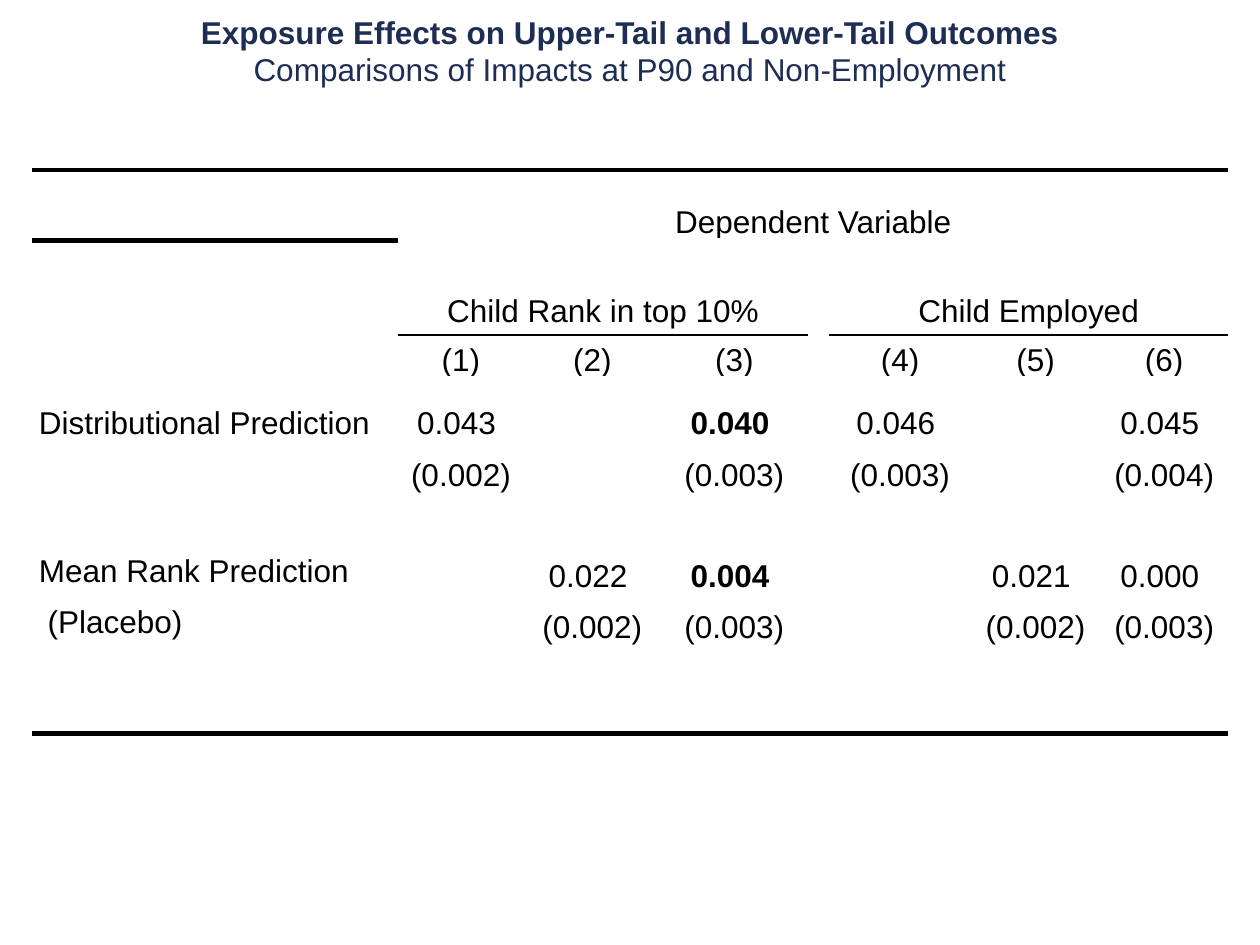
from dataclasses import dataclass

from lxml.etree import SubElement
from pptx import Presentation
from pptx.dml.color import RGBColor
from pptx.enum.text import MSO_ANCHOR as Anchor, PP_ALIGN as Align
from pptx.oxml.ns import qn
from pptx.util import Pt


@dataclass(frozen=True)
class Theme:
    font: str = "Arial"
    size: float = 18
    title: str = "1E2D53"
    ink: str = "000000"
    paper: str = "FFFFFF"
    thick: float = 3
    thin: float = 0.75
    leading: float = 1.15


THEME = Theme()
NO_GRID_STYLE = "{2D5ABB26-0587-4C30-8999-92F81FD0307C}"

COLUMN_WIDTHS = [209.4, 72, 21.3, 56.9, 16.4, 67.7, 12, 81.4, 73.5, 73.5]
ROW_HEIGHTS = [29.5, 40.3, 24.5, 29.5, 24.8, 36, 29.5, 29.5, 28.1, 29.5, 50.4, 28.8]
LAST = len(COLUMN_WIDTHS) - 1

# Merged cells: row -> (first column, last column)
MERGES = {
    0: [(1, LAST)],
    1: [(1, LAST)],
    2: [(1, 2), (3, 4)],
    3: [(1, 5), (7, LAST)],
    **{row: [(2, 3), (4, 5)] for row in range(4, 10)},
    10: [(0, LAST)],
    11: [(0, LAST)],
}

# Rules from top to bottom: row above, first column, last column, width, colour.
# Paper-coloured rules keep the edge below a black rule clear.
RULES = [
    (0, 0, LAST, THEME.thick, THEME.ink),
    (1, 0, 0, THEME.thick, THEME.ink),
    (1, 1, LAST, THEME.thick, THEME.paper),
    (2, 0, 0, THEME.thick, THEME.paper),
    (3, 1, 5, THEME.thin, THEME.ink),
    (3, 7, LAST, THEME.thin, THEME.ink),
    (4, 1, LAST, THEME.thick, THEME.paper),
    (10, 0, LAST, THEME.thick, THEME.ink),
]

HEADINGS = {
    (1, 1): ("Dependent Variable", Anchor.BOTTOM),
    (3, 1): ("Child Rank in top 10%", Anchor.MIDDLE),
    (3, 7): ("Child Employed", Anchor.MIDDLE),
}
LABELS = {
    5: ("Distributional Prediction", Anchor.BOTTOM),
    8: ("Mean Rank Prediction", Anchor.MIDDLE),
    9: (" (Placebo)", Anchor.MIDDLE),
}
MODEL_COLUMNS = [1, 2, 4, 7, 8, 9]
ESTIMATES = {
    5: ["0.043 ", "", "0.040 ", "0.046 ", "", "0.045 "],
    6: ["(0.002)", "", "(0.003)", "(0.003)", "", "(0.004)"],
    8: ["", "0.022 ", "0.004 ", "", "0.021 ", "0.000 "],
    9: ["", "(0.002)", "(0.003)", "", "(0.002)", "(0.003)"],
}
BOLD_CELLS = {(5, 4), (8, 4)}


def apply(target, values):
    for name, value in values.items():
        setattr(target, name, value)


def write(para, text, color, bold=False, align=Align.CENTER):
    para.alignment = align
    span = para.add_run()
    span.text = text
    apply(span.font, {"name": THEME.font, "size": Pt(THEME.size), "bold": bold})
    span.font.color.rgb = RGBColor.from_string(color)


def fill_cell(cell, text, anchor=Anchor.BOTTOM, inset=0.7, leading=None, **style):
    apply(cell, {"vertical_anchor": anchor,
                 "margin_left": Pt(inset), "margin_right": Pt(inset)})
    para = cell.text_frame.paragraphs[0]
    if leading:
        para.line_spacing = leading
    write(para, text, THEME.ink, **style)


def draw_edge(cell, side, width, color):
    """Add a border; borders must stand before the cell's fill."""
    props = cell._tc.get_or_add_tcPr()
    line = SubElement(props, qn(f"a:ln{side}"), w=str(Pt(width)))
    SubElement(SubElement(line, qn("a:solidFill")), qn("a:srgbClr"), val=color)
    props.find(qn("a:solidFill")).addprevious(line)


def add_title(page, left, top, width, height):
    box = page.shapes.add_textbox(Pt(left), Pt(top), Pt(width), Pt(height))
    frame = box.text_frame
    frame.word_wrap = True
    write(frame.paragraphs[0], "Exposure Effects on Upper-Tail and Lower-Tail Outcomes",
          THEME.title, bold=True)
    write(frame.add_paragraph(), "Comparisons of Impacts at P90 and Non-Employment",
          THEME.title)


def add_results(page, left, top, width, height):
    table = page.shapes.add_table(len(ROW_HEIGHTS), len(COLUMN_WIDTHS),
                                  Pt(left), Pt(top), Pt(width), Pt(height)).table
    apply(table, {"first_row": False, "horz_banding": False})
    table._tbl.tblPr.find(qn("a:tableStyleId")).text = NO_GRID_STYLE

    # Grid
    for column, size in zip(table.columns, COLUMN_WIDTHS):
        column.width = Pt(size)
    for row, size in zip(table.rows, ROW_HEIGHTS):
        row.height = Pt(size)
    for cell in table.iter_cells():
        apply(cell, {f"margin_{side}": 0 for side in ("left", "top", "right", "bottom")})
        cell.fill.solid()
        cell.fill.fore_color.rgb = RGBColor.from_string(THEME.paper)
    for row, spans in MERGES.items():
        for first, last in spans:
            table.cell(row, first).merge(table.cell(row, last))

    # Rules, set on both cells that share the edge
    for row, first, last, weight, color in RULES:
        for column in range(first, last + 1):
            draw_edge(table.cell(row, column), "B", weight, color)
            draw_edge(table.cell(row + 1, column), "T", weight, color)

    # Headings, model numbers and row labels
    roomy = {"inset": 4.3, "leading": THEME.leading}
    for (row, column), (text, anchor) in HEADINGS.items():
        fill_cell(table.cell(row, column), text, anchor, **roomy)
    for number, column in enumerate(MODEL_COLUMNS, 1):
        fill_cell(table.cell(4, column), f"({number})", **roomy)
    for row, (text, anchor) in LABELS.items():
        fill_cell(table.cell(row, 0), text, anchor, align=Align.LEFT, **roomy)

    # Estimates and standard errors
    for row, values in ESTIMATES.items():
        for column, text in zip(MODEL_COLUMNS, values):
            if text:
                fill_cell(table.cell(row, column), text, bold=(row, column) in BOLD_CELLS)


def main():
    deck = Presentation()
    apply(deck, {"slide_width": Pt(720), "slide_height": Pt(540)})
    page = deck.slides.add_slide(deck.slide_layouts[6])
    add_title(page, 0, 3.6, 720, 51)
    add_results(page, 18, 67.7, sum(COLUMN_WIDTHS), sum(ROW_HEIGHTS))
    deck.save("out.pptx")


if __name__ == "__main__":
    main()
